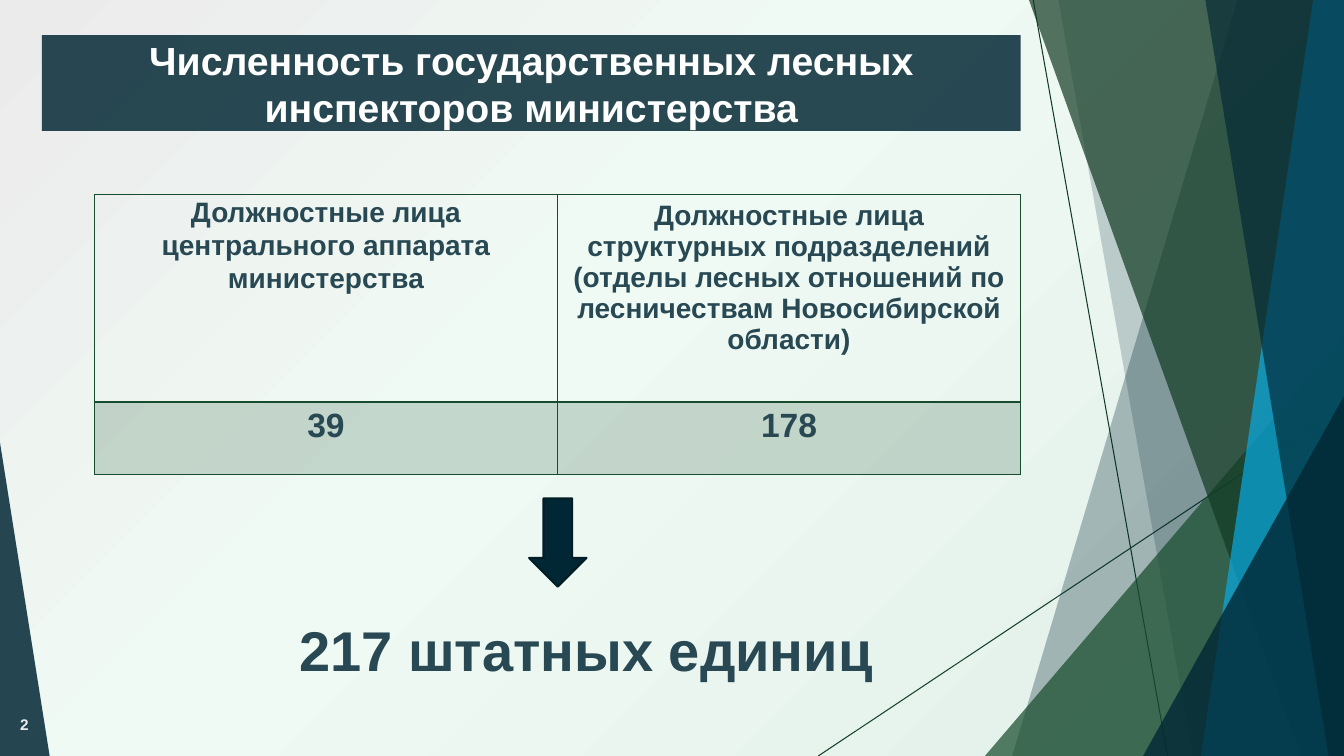
from lxml import etree
from pptx import Presentation, oxml
from pptx import util as u
from pptx.dml.color import RGBColor
from pptx.enum import shapes, text
from pptx.oxml.ns import nsdecls, qn

NAVY = RGBColor(0x02, 0x27, 0x34)
SLATE = RGBColor(0x28, 0x49, 0x53)
INK = RGBColor(0x01, 0x1D, 0x26)
PINE = RGBColor(0x11, 0x3A, 0x22)
MOSS = RGBColor(0x14, 0x41, 0x26)
GREEN = RGBColor(0x17, 0x4D, 0x2D)
BLUE = RGBColor(0x09, 0xAB, 0xE4)
WHITE = RGBColor(0xFF, 0xFF, 0xFF)
MIST = RGBColor(0xEB, 0xEB, 0xEB)
MINT = RGBColor(0xF0, 0xFA, 0xF4)
SAGE = RGBColor(0xE1, 0xEF, 0xE9)
WIDE, HIGH = 960, 540
MID, TOP = text.MSO_ANCHOR.MIDDLE, text.MSO_ANCHOR.TOP
LEFT, RIGHT = 0, 1


class Deck:
    """Draws styled elements on one slide, with lengths in points."""

    def __init__(self):
        self.font = "Arial"
        self.prs = Presentation()
        self.prs.slide_width, self.prs.slide_height = u.Pt(WIDE), u.Pt(HIGH)
        self.slide = self.prs.slides.add_slide(self.prs.slide_layouts[5])
        self.draw = self.slide.shapes

    def back(self, stops):
        self.slide.background.fill.gradient()
        old = next(self.slide.element.iter(qn("a:gradFill")))
        marks = "".join(
            f'<a:gs pos="{pos * 1000}"><a:srgbClr val="{color}"/></a:gs>' for pos, color in stops)
        new = oxml.parse_xml(
            f'<a:gradFill {nsdecls("a")} rotWithShape="1"><a:gsLst>{marks}</a:gsLst>'
            '<a:path path="circle"><a:fillToRect l="100000" t="100000"/></a:path></a:gradFill>')
        old.getparent().replace(old, new)

    def tint(self, fill, props, color, alpha=100):
        fill.solid()
        fill.fore_color.rgb = color
        if alpha < 100:
            mark = props.find(qn("a:solidFill"))[0]
            etree.SubElement(mark, qn("a:alpha")).set("val", str(alpha * 1000))

    def paint(self, item, color, alpha=100, edge=None):
        item.shadow.inherit = False
        self.tint(item.fill, item.element.spPr, color, alpha)
        if edge:
            item.line.color.rgb, item.line.width = edge, u.Pt(1.5)
        else:
            item.line.fill.background()

    def line(self, start, end, color):
        item = self.draw.add_connector(
            shapes.MSO_CONNECTOR.STRAIGHT, *map(u.Pt, start + end))
        item.line.color.rgb, item.line.width = color, u.Pt(0.75)
        etree.SubElement(item.element.spPr, qn("a:effectLst"))

    def pane(self, top, foot, color, alpha):
        form = self.draw.build_freeform(u.Pt(top), 0)
        form.add_line_segments(
            [(u.Pt(x), u.Pt(y)) for x, y in ((WIDE, 0), (WIDE, HIGH), (foot, HIGH))])
        self.paint(form.convert_to_shape(), color, alpha)

    def wedge(self, box, peak, color, alpha):
        item = self.draw.add_shape(shapes.MSO_SHAPE.ISOSCELES_TRIANGLE, *map(u.Pt, box))
        item.adjustments[0] = peak
        self.paint(item, color, alpha)

    def arrow(self, box, color, edge):
        item = self.draw.add_shape(shapes.MSO_SHAPE.DOWN_ARROW, *map(u.Pt, box))
        self.paint(item, color, edge=edge)

    def words(self, frame, line, size, color, align=text.PP_ALIGN.CENTER):
        frame.text = line
        para = frame.paragraphs[0]
        para.alignment = align
        font = para.font
        font.name, font.size, font.bold = self.font, u.Pt(size), True
        font.color.rgb = color

    def title(self, line, box, color, alpha):
        item = self.draw.title
        item.left, item.top, item.width, item.height = map(u.Pt, box)
        item.element.spPr.append(oxml.parse_xml(
            f'<a:prstGeom {nsdecls("a")} prst="snip2DiagRect"><a:avLst>'
            '<a:gd name="adj1" fmla="val 0"/><a:gd name="adj2" fmla="val 50000"/>'
            '</a:avLst></a:prstGeom>'))
        self.paint(item, color, alpha)
        frame = item.text_frame
        frame.auto_size, frame.vertical_anchor = text.MSO_AUTO_SIZE.NONE, MID
        self.words(frame, line, 28, WHITE)

    def label(self, line, box, size, color, align=text.PP_ALIGN.CENTER, anchor=TOP):
        frame = self.draw.add_textbox(*map(u.Pt, box)).text_frame
        frame.word_wrap, frame.vertical_anchor = True, anchor
        self.words(frame, line, size, color, align)

    def edge(self, cell, color, foot):
        props = cell._tc.get_or_add_tcPr()
        for side, width in zip("LRTB", (1, 1, 1, foot)):
            props.append(oxml.parse_xml(
                f'<a:ln{side} {nsdecls("a")} w="{u.Pt(width)}"><a:solidFill>'
                f'<a:srgbClr val="{color}"/></a:solidFill></a:ln{side}>'))
        return props

    def table(self, rows, box, highs, sizes):
        grid = self.draw.add_table(len(rows), len(rows[0]), *map(u.Pt, box)).table
        grid.first_row = grid.horz_banding = False
        for r, row in enumerate(rows):
            grid.rows[r].height = u.Pt(highs[r])
            for c, line in enumerate(row):
                cell = grid.cell(r, c)
                props = self.edge(cell, GREEN, 1 if r else 2)
                if r:
                    self.tint(cell.fill, props, GREEN, 20)
                else:
                    cell.fill.background()
                self.words(cell.text_frame, line, sizes[r], SLATE)
        head = grid.cell(0, 0)
        head.margin_left = head.margin_right = u.Pt(5)
        head.margin_top = head.margin_bottom = 0
        head.text_frame.paragraphs[0].line_spacing = 1.07


def main():
    deck = Deck()
    deck.back([(0, SAGE), (58, MINT), (100, MIST)])
    deck.line((738, 0), (834, HIGH), PINE)
    deck.line((WIDE, 290), (584.5, HIGH), MOSS)
    deck.pane(884, 723, NAVY, 30)
    deck.pane(756, 852, NAVY, 20)
    deck.wedge((703.5, 240, 256.5, 300), RIGHT, GREEN, 72)
    deck.pane(735, 929.5, PINE, 70)
    deck.pane(938, 858, BLUE, 70)
    deck.pane(861, 949, NAVY, 65)
    deck.wedge((816.5, 283, 143.5, 257), RIGHT, NAVY, 80)
    deck.wedge((0, 316, 35.5, 224), LEFT, NAVY, 85)
    deck.table(
        [("Должностные лица центрального аппарата министерства",
          "Должностные лица структурных подразделений "
          "(отделы лесных отношений по лесничествам Новосибирской области)"),
         ("39", "178")],
        (67.5, 139, 661.5, 200), (148, 52), (20, 24))
    deck.title("Численность государственных лесных инспекторов министерства",
               (30, 25, 699, 68.5), NAVY, 84)
    deck.arrow((378, 356, 41, 63), NAVY, INK)
    deck.label("217 штатных единиц", (190, 436, 457, 55.5), 40, SLATE)
    deck.label("2", (-26.5, 503, 54, 29), 11, MIST, text.PP_ALIGN.RIGHT, MID)
    deck.prs.save("out.pptx")


if __name__ == "__main__":
    main()
